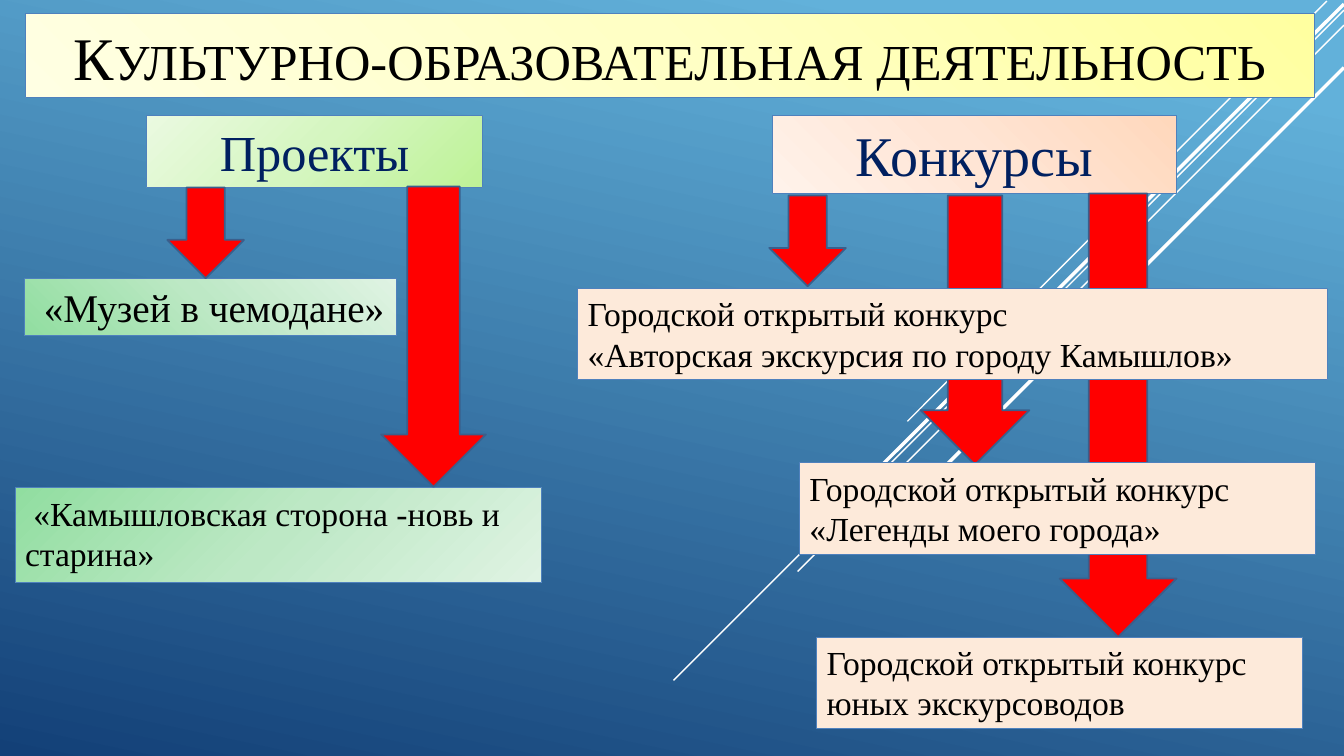
from copy import deepcopy

from lxml.etree import SubElement
from pptx import Presentation
from pptx.dml.color import RGBColor
from pptx.enum.shapes import MSO_CONNECTOR, MSO_SHAPE
from pptx.enum.text import MSO_ANCHOR, MSO_AUTO_SIZE, PP_ALIGN
from pptx.oxml.ns import qn
from pptx.util import Inches, Pt

# Gradients: stops as (percent, colour), then an angle or a focus corner
SKY = {"stops": [(10, "62B1DA"), (100, "134077")], "angle": 102}
YELLOW = {"stops": [(0, "FFFFA0"), (50, "FFFFC5"), (100, "FFFFE3")], "angle": 135}
LIME = {"stops": [(0, "BEF297"), (50, "D5F6C0"), (100, "EAFAE0")], "focus": "lt"}
PEACH = {"stops": [(0, "FFD8BC"), (50, "FFE5D5"), (100, "FFF2EA")], "angle": 135}
GREEN_STOPS = [(0, "91DEA0"), (50, "BDE8C5"), (100, "DFF3E3")]
GREEN_CORNER = {"stops": GREEN_STOPS, "focus": "tr"}
GREEN_SLANT = {"stops": GREEN_STOPS, "angle": 45}
CREAM = "FDEADA"
NAVY = "002060"
BLACK = "000000"


def color(hex_value):
    return RGBColor.from_string(hex_value)


def set_attributes(target, values):
    for name, value in values.items():
        setattr(target, name, value)


class SlideBuilder:
    font = "Times New Roman"
    box_line = ("4F81BD", 0.75)
    arrow_line = ("3A5F8C", 1.25)
    arrow_fill = "FF0000"
    ray_color = "FFFFFF"

    def __init__(self, presentation):
        self.slide = presentation.slides.add_slide(presentation.slide_layouts[5])

    def paint(self, fill, element, paint):
        if isinstance(paint, str):
            fill.solid()
            fill.fore_color.rgb = color(paint)
            return
        fill.gradient()
        gradient = element.find(".//" + qn("a:gradFill"))
        stop_list = gradient.find(qn("a:gsLst"))
        while len(stop_list) < len(paint["stops"]):
            stop_list.append(deepcopy(stop_list[0]))
        for stop, (percent, hex_value) in zip(fill.gradient_stops, paint["stops"]):
            stop.position = percent / 100
            stop.color.rgb = color(hex_value)
        if "angle" in paint:
            fill.gradient_angle = 360 - paint["angle"]
        else:
            gradient.remove(gradient.find(qn("a:lin")))
            circle = SubElement(gradient, qn("a:path"), {"path": "circle"})
            SubElement(circle, qn("a:fillToRect"),
                       {side: "100000" for side in paint["focus"]})

    def background(self, paint):
        self.paint(self.slide.background.fill, self.slide.element, paint)

    def outline(self, line, hex_value, width):
        line.color.rgb = color(hex_value)
        line.width = Pt(width)

    def ray(self, start, end, width):
        points = [Inches(value) for value in (*start, *end)]
        connector = self.slide.shapes.add_connector(MSO_CONNECTOR.STRAIGHT, *points)
        self.outline(connector.line, self.ray_color, width)
        SubElement(connector.element.spPr, qn("a:effectLst"))

    def add_text(self, shape, paragraphs, hex_value, frame_format, alignment):
        frame = shape.text_frame
        set_attributes(frame, {"word_wrap": True, **frame_format})
        for index, runs in enumerate(paragraphs):
            paragraph = frame.add_paragraph() if index else frame.paragraphs[0]
            paragraph.alignment = alignment
            for text, size in runs:
                run = paragraph.add_run()
                run.text = text
                set_attributes(run.font, {"name": self.font, "size": Pt(size)})
                run.font.color.rgb = color(hex_value)

    def title(self, bounds, runs, paint):
        title = self.slide.shapes.title
        places = map(Inches, bounds)
        set_attributes(title, dict(zip(("left", "top", "width", "height"), places)))
        self.paint(title.fill, title.element, paint)
        self.outline(title.line, *self.box_line)
        frame_format = {"vertical_anchor": MSO_ANCHOR.BOTTOM,
                        "auto_size": MSO_AUTO_SIZE.NONE}
        self.add_text(title, [runs], BLACK, frame_format, PP_ALIGN.CENTER)
        # Bring the title in front of the rays
        title.element.getparent().append(title.element)

    def shape(self, kind, bounds, paint, line):
        shape = self.slide.shapes.add_shape(kind, *map(Inches, bounds))
        shape.shadow.inherit = False
        self.paint(shape.fill, shape.element, paint)
        self.outline(shape.line, *line)
        return shape

    def box(self, bounds, lines, size, paint, hex_value=BLACK, alignment=PP_ALIGN.LEFT):
        shape = self.shape(MSO_SHAPE.RECTANGLE, bounds, paint, self.box_line)
        frame_format = {"vertical_anchor": MSO_ANCHOR.TOP,
                        "auto_size": MSO_AUTO_SIZE.SHAPE_TO_FIT_TEXT}
        paragraphs = [[(text, size)] for text in lines]
        self.add_text(shape, paragraphs, hex_value, frame_format, alignment)

    def arrow(self, *bounds):
        self.shape(MSO_SHAPE.DOWN_ARROW, bounds, self.arrow_fill, self.arrow_line)


def main():
    presentation = Presentation()
    presentation.slide_width = Inches(13.33)
    presentation.slide_height = Inches(7.5)
    builder = SlideBuilder(presentation)

    # Background and diagonal rays
    builder.background(SKY)
    for start, end, width in (
        ((13.16, 0.01), (9, 4.18), 1),
        ((13.33, 0.1), (6.68, 6.75), 1),
        ((13.33, 0.25), (7.91, 5.67), 1),
        ((13.33, 0.04), (8.02, 5.34), 2.5),
        ((13.33, 0.67), (8.58, 5.42), 2.5),
    ):
        builder.ray(start, end, width)

    # Title
    builder.title((0.25, 0.13, 12.79, 0.84),
                  [("К", 43.2), ("УЛЬТУРНО-ОБРАЗОВАТЕЛЬНАЯ ДЕЯТЕЛЬНОСТЬ", 36)], YELLOW)

    # Column headings
    builder.box((1.45, 1.15, 3.34, 0.71), ["Проекты"], 36, LIME, NAVY, PP_ALIGN.CENTER)
    builder.box((7.66, 1.15, 4.01, 0.77), ["Конкурсы"], 40, PEACH, NAVY, PP_ALIGN.CENTER)

    # Projects
    builder.box((0.24, 2.76, 3.69, 0.57), [" «Музей в чемодане»"], 28, GREEN_CORNER)
    builder.box((0.15, 4.84, 5.22, 0.94),
                [" «Камышловская сторона -новь и старина»"], 24, GREEN_SLANT)

    # Long arrows that pass behind the contest boxes
    builder.arrow(9.13, 1.94, 1.08, 2.67)
    builder.arrow(10.51, 1.92, 1.16, 4.4)

    # Contests
    contest = "Городской открытый конкурс"
    for bounds, lines in (
        ((7.93, 4.59, 5.12, 0.91), [contest, "«Легенды моего города»"]),
        ((5.73, 2.86, 7.44, 0.91), [contest, "«Авторская экскурсия по городу Камышлов»"]),
        ((8.1, 6.32, 4.82, 0.91), [contest + " юных экскурсоводов"]),
    ):
        builder.box(bounds, lines, 24, CREAM)

    # Arrows in front
    builder.arrow(1.66, 1.86, 0.76, 0.9)
    builder.arrow(7.63, 1.94, 0.76, 0.9)
    builder.arrow(3.78, 1.85, 1.04, 2.98)

    presentation.save("out.pptx")


if __name__ == "__main__":
    main()
